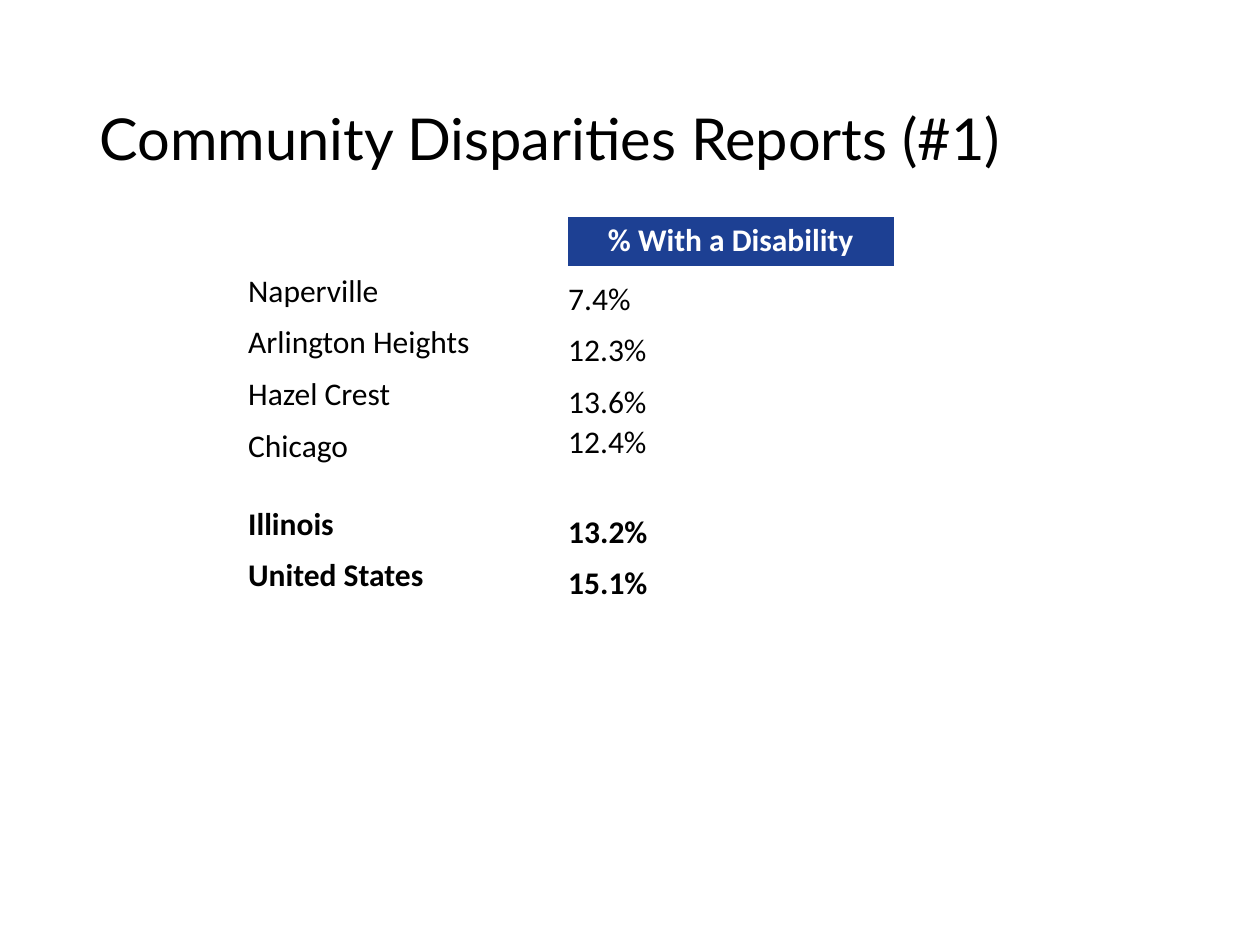
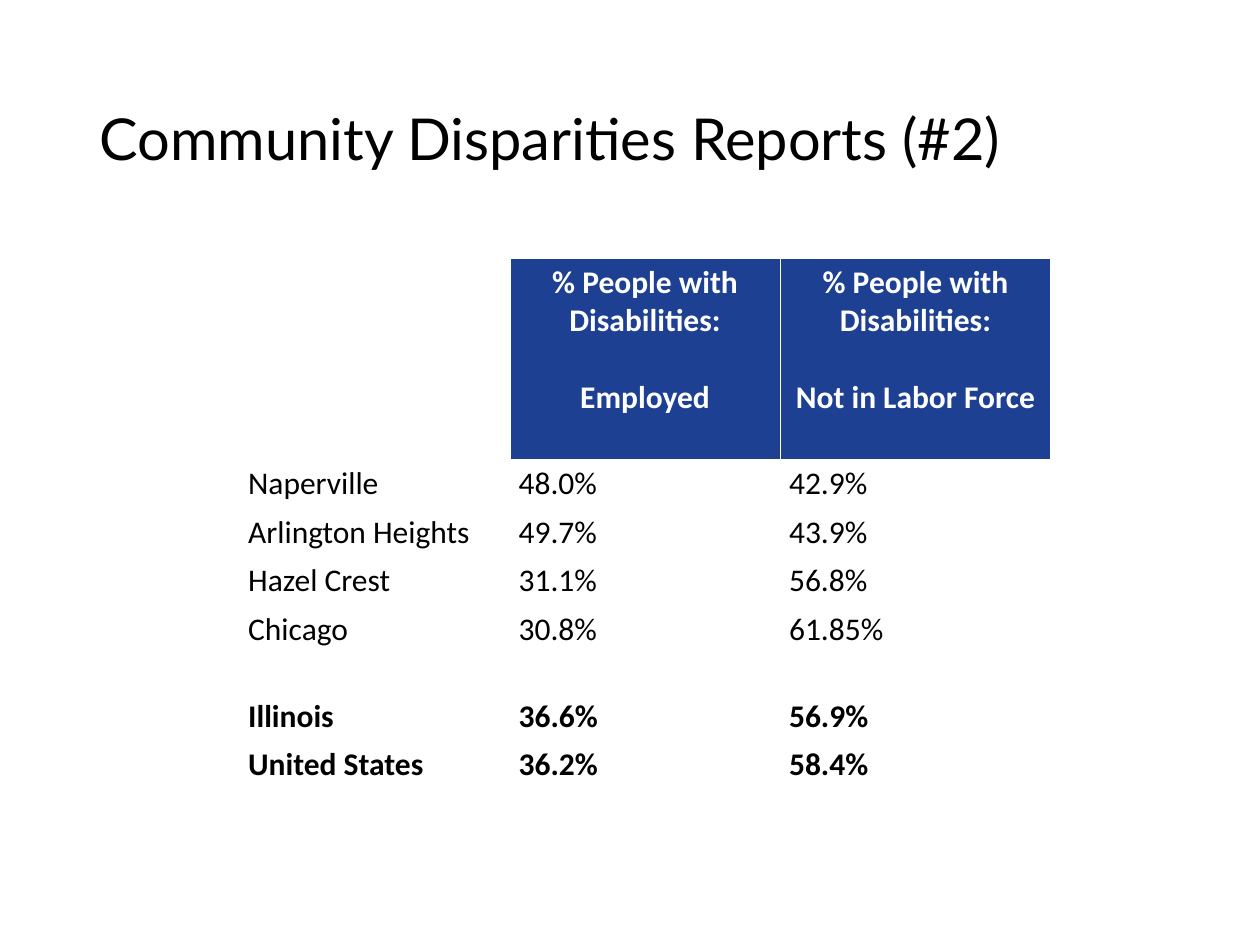
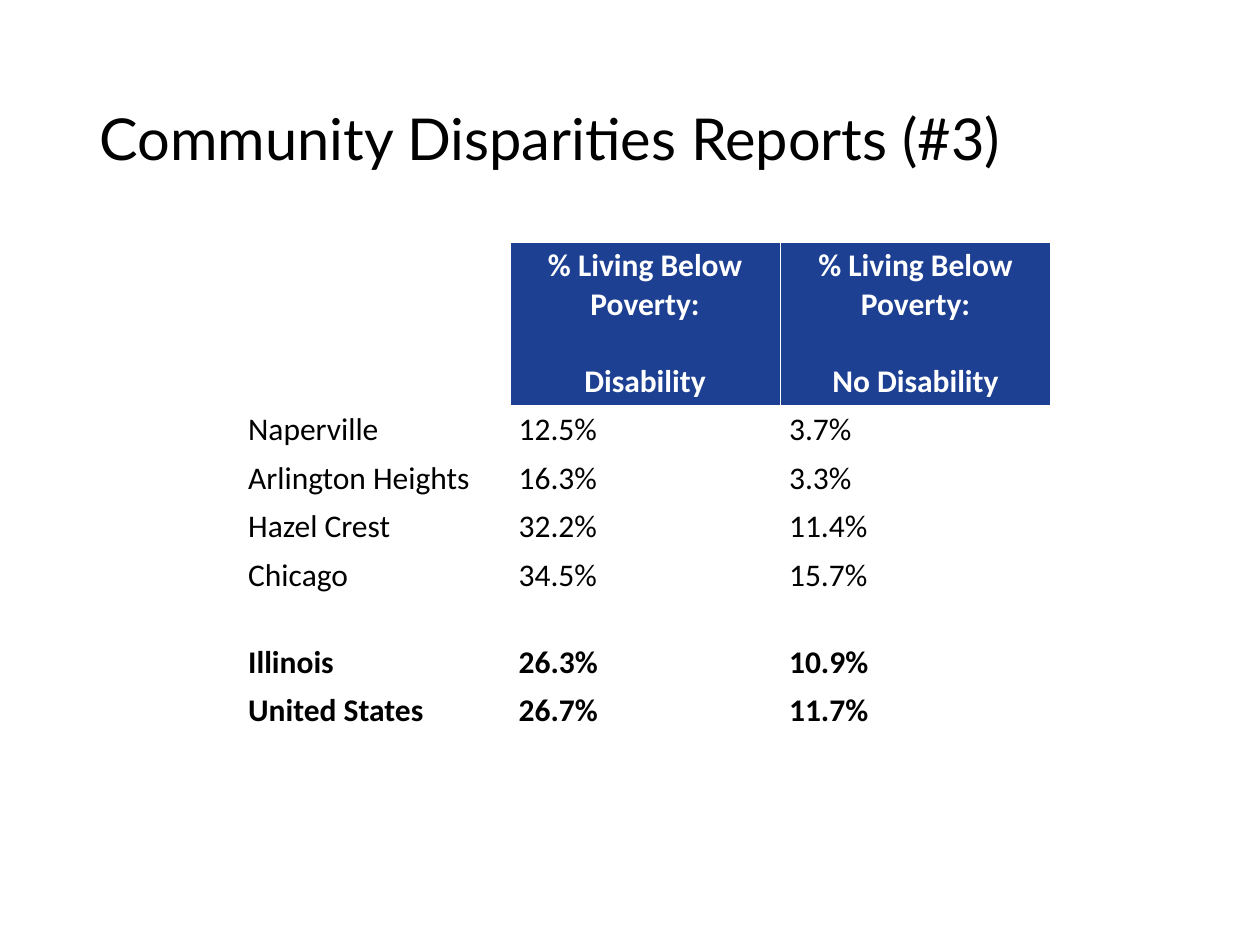
"""Build three slides of community disparity tables."""
import dataclasses

import pptx
import pptx.dml.color
import pptx.enum.text
import pptx.util

Inches = pptx.util.Inches
Align = pptx.enum.text.PP_ALIGN
Anchor = pptx.enum.text.MSO_ANCHOR


@dataclasses.dataclass(frozen=True)
class Theme:
    """Colours, fonts and type sizes of the deck."""
    ink: str = "000000"
    white: str = "FFFFFF"
    blue: str = "1D4093"
    head: str = "Lato"
    body: str = "Calibri"
    large: int = 33
    small: int = 18
    line: int = 22


THEME = Theme()
TITLE = "Community Disparities Reports (#{})"
TITLE_BOX = (0.69, 0.4, 8.62, 1.45)
PLACES = ["Naperville", "Arlington Heights", "Hazel Crest", "Chicago",
          "Illinois", "United States"]
TOTALS = ("Illinois", "United States")
GAP_PLACE = "Chicago"
PAD = (0.07, 0.04, 0.07, 0.04)
TIGHT = (0.01, 0.01, 0.01, 0)

REPORTS = [
    dict(box=(1.9, 1.72, 5.2), top=0.4, step=0.41, gap=0.62, tight=True,
         heads=[["% With a Disability"]],
         data=[["7.4%", "12.3%", "13.6%", "12.4%", "13.2%", "15.1%"]]),
    dict(box=(1.9, 2.05, 6.44), top=1.6, step=0.38, gap=0.69,
         heads=[["% People with Disabilities:", "Employed"],
                ["% People with Disabilities:", "Not in Labor Force"]],
         data=[["48.0%", "49.7%", "31.1%", "30.8%", "36.6%", "36.2%"],
               ["42.9%", "43.9%", "56.8%", "61.85%", "56.9%", "58.4%"]]),
    dict(box=(1.9, 1.92, 6.44), top=1.3, step=0.38, gap=0.69,
         heads=[["% Living Below Poverty:", "Disability"],
                ["% Living Below Poverty:", "No Disability"]],
         data=[["12.5%", "16.3%", "32.2%", "34.5%", "26.3%", "26.7%"],
               ["3.7%", "3.3%", "11.4%", "15.7%", "10.9%", "11.7%"]]),
]


def write(frame, *lines, font=THEME.body, size=THEME.small, color=THEME.ink,
          bold=False, align=Align.LEFT, lead=1.0, before=0):
    """Write one paragraph per line, with space before all but the first."""
    for i, text in enumerate(lines):
        para = frame.add_paragraph() if i else frame.paragraphs[0]
        para.alignment = align
        para.line_spacing = lead
        para.space_before = pptx.util.Pt(before if i else 0)
        run = para.add_run()
        run.text = text
        run.font.name = font
        run.font.size = pptx.util.Pt(size)
        run.font.bold = bold
        run.font.color.rgb = pptx.dml.color.RGBColor.from_string(color)


def set_cell(cell, pad=PAD, fill=None, anchor=Anchor.TOP):
    """Set the margins, fill and anchor of a cell."""
    (cell.margin_left, cell.margin_top,
     cell.margin_right, cell.margin_bottom) = map(Inches, pad)
    cell.vertical_anchor = anchor
    if fill:
        cell.fill.solid()
        cell.fill.fore_color.rgb = pptx.dml.color.RGBColor.from_string(fill)
    else:
        cell.fill.background()


def add_title(slide, text, box):
    """Place and format the slide title."""
    title = slide.shapes.title
    title.left, title.top, title.width, title.height = map(Inches, box)
    frame = title.text_frame
    frame.word_wrap = True
    frame.auto_size = pptx.enum.text.MSO_AUTO_SIZE.NONE
    frame.vertical_anchor = Anchor.MIDDLE
    write(frame, text, font=THEME.head, size=THEME.large, lead=0.9)


def add_grid(slide, box, heads, data, top, step, gap, tight=False):
    """Add a table of places, with a taller row before the totals."""
    left, up, width = box
    heights = [top] + [gap if place == GAP_PLACE else step for place in PLACES]
    count = len(heads) + 1
    table = slide.shapes.add_table(
        len(heights), count, Inches(left), Inches(up),
        Inches(width), Inches(sum(heights))).table
    table.horz_banding = False
    for col in table.columns:
        col.width = Inches(width / count)
    for row, height in zip(table.rows, heights):
        row.height = Inches(height)
    set_cell(table.cell(0, 0))
    for c, lines in enumerate(heads, 1):
        cell = table.cell(0, c)
        set_cell(cell, fill=THEME.blue)
        write(cell.text_frame, *lines, color=THEME.white, bold=True,
              align=Align.CENTER, before=THEME.line)
    for r, texts in enumerate(zip(PLACES, *data), 1):
        place = texts[0]
        for c, text in enumerate(texts):
            cell = table.cell(r, c)
            snug = tight and c > 0
            low = snug and place != GAP_PLACE
            set_cell(cell, pad=TIGHT if snug else PAD,
                     anchor=Anchor.BOTTOM if low else Anchor.TOP)
            write(cell.text_frame, text, bold=place in TOTALS)


def main():
    """Build and save the deck."""
    deck = pptx.Presentation()
    deck.slide_width, deck.slide_height = Inches(10), Inches(7.5)
    layout = deck.slide_layouts.get_by_name("Title Only")
    for number, report in enumerate(REPORTS, 1):
        slide = deck.slides.add_slide(layout)
        add_title(slide, TITLE.format(number), TITLE_BOX)
        add_grid(slide, **report)
    deck.save("out.pptx")


if __name__ == "__main__":
    main()
